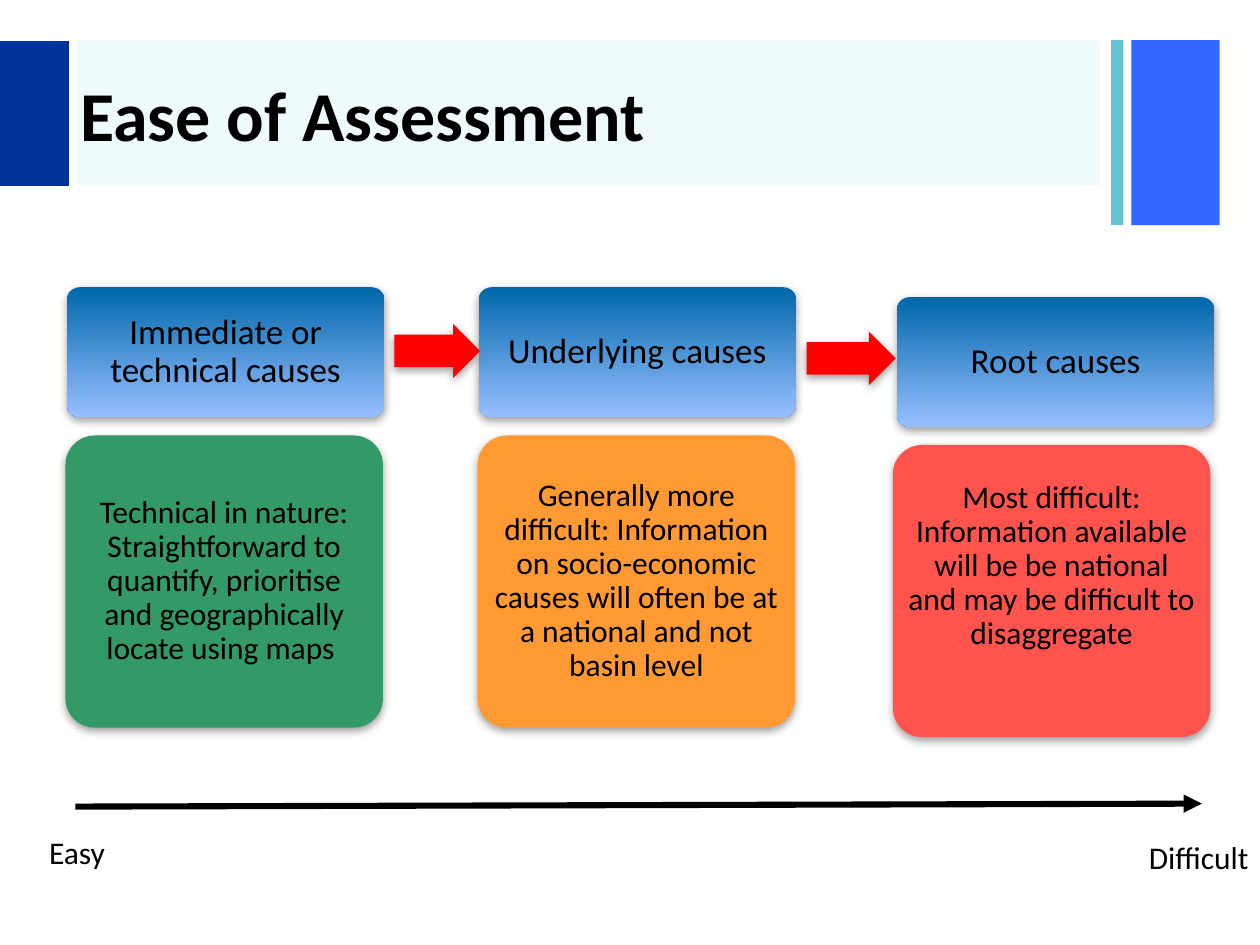
from lxml.etree import SubElement
from pptx import Presentation
from pptx.dml.color import RGBColor as RGB
from pptx.enum.shapes import MSO_CONNECTOR as LINK, MSO_SHAPE as SHAPE
from pptx.enum.text import MSO_ANCHOR as ANCHOR, PP_ALIGN as ALIGN
from pptx.oxml.ns import qn
from pptx.util import Cm, Pt

hues = {
    "black": "000000", "navy": "003399", "blue": "3366FF", "teal": "65C4D2",
    "aqua": "14C5D0", "top": "0067AB", "base": "97BFFF", "red": "FF0000",
    "green": "339966", "orange": "FF9933", "coral": "FF544E", "gray": "808080",
}

deck = Presentation()
deck.slide_width, deck.slide_height = Cm(25.4), Cm(19.05)
slide = deck.slides.add_slide(deck.slide_layouts[6])
shapes = slide.shapes


def draw(kind, box, hue, shade=False):
    shape = shapes.add_shape(kind, *[Cm(n) for n in box])
    shape.shadow.inherit = False
    shape.line.fill.background()
    if hue == "fade":
        shape.fill.gradient()
        shape.fill.gradient_angle = 270
        for stop, name, spot in zip(shape.fill.gradient_stops, ("top", "base"), (0, 1)):
            stop.color.rgb = RGB.from_string(hues[name])
            stop.position = spot
    else:
        shape.fill.solid()
        shape.fill.fore_color.rgb = RGB.from_string(hues[hue])
    if shade:
        effects = shape._element.spPr.find(qn("a:effectLst"))
        outer = SubElement(effects, qn("a:outerShdw"), blurRad=str(Pt(5)),
                           dist=str(Pt(2)), dir="5400000", rotWithShape="0")
        color = SubElement(outer, qn("a:srgbClr"), val=hues["gray"])
        SubElement(color, qn("a:alpha"), val="75000")
    return shape


def write(shape, text, size, bold=False, wrap=True):
    frame = shape.text_frame
    frame.word_wrap = wrap
    para = frame.paragraphs[0]
    para.text = text
    para.font.name = "Calibri"
    para.font.size = Pt(size)
    para.font.bold = bold
    para.font.color.rgb = RGB.from_string(hues["black"])
    return frame


draw(SHAPE.RECTANGLE, (22.81, 0.81, 1.78, 3.73), "blue")
draw(SHAPE.RECTANGLE, (22.4, 0.81, 0.25, 3.73), "teal")
band = draw(SHAPE.RECTANGLE, (1.55, 0.82, 20.63, 2.92), "aqua")
tint = band._element.spPr.find(qn("a:solidFill"))[0]
SubElement(tint, qn("a:alpha"), val="7000")
draw(SHAPE.RECTANGLE, (0, 0.83, 1.39, 2.92), "navy")

title = shapes.add_textbox(Cm(1.37), Cm(0.86), Cm(21.01), Cm(2.84))
write(title, "Ease of Assessment", 40, True).vertical_anchor = ANCHOR.MIDDLE

wide = 6.4
blocks = [
    (1.35, 5.79, 2.62, "fade", 20, 0.22, 0, "Immediate or technical causes"),
    (9.65, 5.79, 2.62, "fade", 20, 0.22, 0, "Underlying causes"),
    (18.08, 5.99, 2.62, "fade", 20, 0.22, 0, "Root causes"),
    (1.32, 8.78, 5.89, "green", 18, 0.13, 0,
     "Technical in nature: Straightforward to quantify, prioritise "
     "and geographically locate using maps "),
    (9.63, 8.78, 5.89, "orange", 18, 0.13, 0,
     "Generally more difficult: Information on socio-economic causes "
     "will often be at a national and not basin level"),
    (18, 8.97, 5.89, "coral", 18, 0.13, 1,
     "Most difficult: Information available will be be national "
     "and may be difficult to disaggregate"),
]
for left, top, high, hue, size, pad, lift, text in blocks:
    block = draw(SHAPE.ROUNDED_RECTANGLE, (left, top, wide, high), hue, True)
    block.adjustments[0] = 0.1
    frame = write(block, text, size)
    frame.vertical_anchor = ANCHOR.MIDDLE
    frame.margin_left = frame.margin_right = frame.margin_top = Cm(pad)
    frame.margin_bottom = Cm(pad + lift)
    frame.paragraphs[0].alignment = ALIGN.CENTER
    frame.paragraphs[0].line_spacing = 0.9

for box in ((7.95, 6.53, 1.73, 1.09), (16.26, 6.68, 1.8, 1.09)):
    arrow = draw(SHAPE.RIGHT_ARROW, box, "red", True)
    arrow.adjustments[0] = 0.6

scale = shapes.add_connector(LINK.STRAIGHT, Cm(1.52), Cm(16.26), Cm(24.23), Cm(16.2))
scale.line.width = Pt(3.5)
scale.line.color.rgb = RGB.from_string(hues["black"])
SubElement(scale.line._get_or_add_ln(), qn("a:tailEnd"), type="triangle")
SubElement(scale._element.spPr, qn("a:effectLst"))

for left, top, width, text in ((0.74, 16.66, 1.68, "Easy"), (22.91, 16.76, 2.54, "Difficult")):
    label = shapes.add_textbox(Cm(left), Cm(top), Cm(width), Cm(1.02))
    write(label, text, 18, wrap=False)

deck.save("out.pptx")
